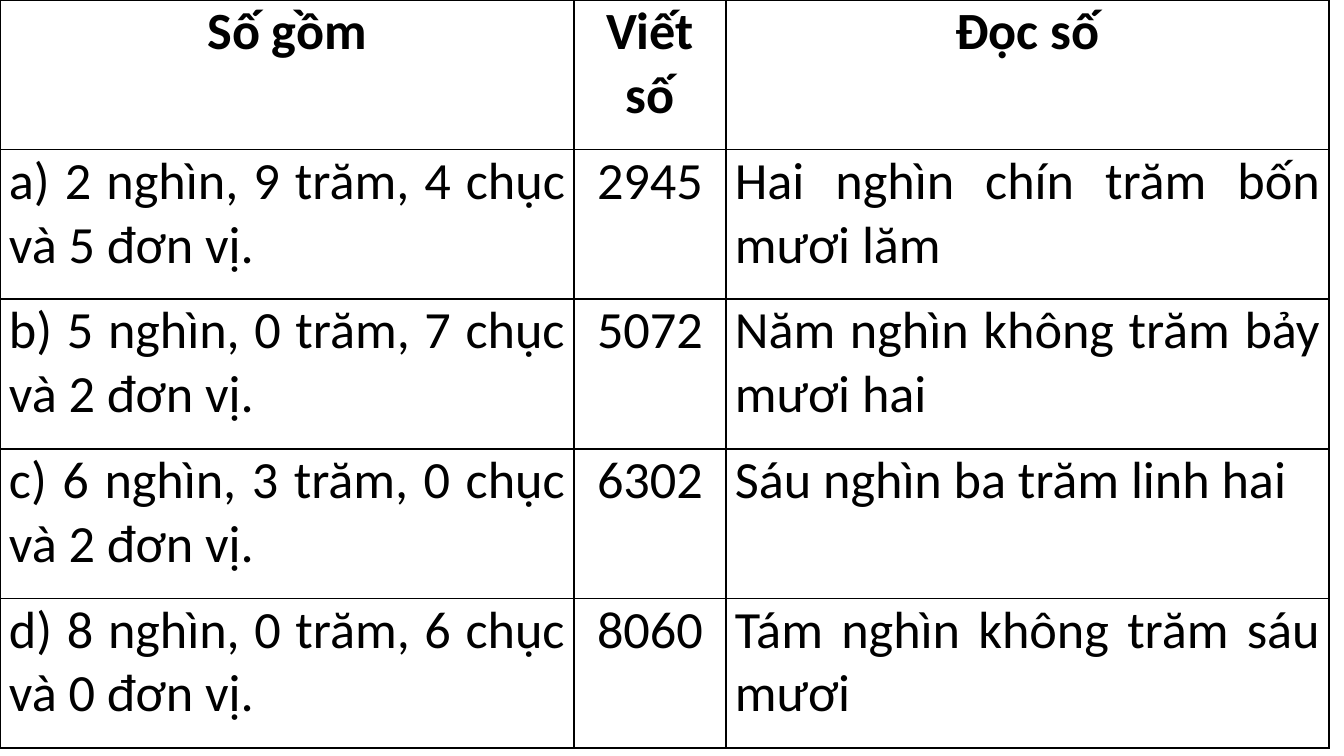
from lxml import etree
from pptx import Presentation
from pptx import util as u
from pptx.dml.color import RGBColor
from pptx.enum import text
from pptx.oxml import ns

HEADER = ("Số gồm", "Viết số", "Đọc số")
NUMBERS = [
    ("a) 2 nghìn, 9 trăm, 4 chục và 5 đơn vị.", "2945", "Hai nghìn chín trăm bốn mươi lăm"),
    ("b) 5 nghìn, 0 trăm, 7 chục và 2 đơn vị.", "5072", "Năm nghìn không trăm bảy mươi hai"),
    ("c) 6 nghìn, 3 trăm, 0 chục và 2 đơn vị.", "6302", "Sáu nghìn ba trăm linh hai"),
    ("d) 8 nghìn, 0 trăm, 6 chục và 0 đơn vị.", "8060", "Tám nghìn không trăm sáu mươi"),
]
THEME = {"font": "Calibri", "size": 28, "ink": "000000", "paper": "FFFFFF", "border": 1}
SLIDE = (1344, 756)
COLUMNS = (574, 152, 603)
TABLE_HEIGHT = 748
MARGIN = 9
CENTER, JUSTIFY = text.PP_ALIGN.CENTER, text.PP_ALIGN.JUSTIFY
BODY_ALIGN = (JUSTIFY, CENTER, JUSTIFY)


def px(n):
    return u.Emu(round(n * 914400 / 134.4))


def add_borders(cell):
    tc_pr = cell._tc.get_or_add_tcPr()
    for side in ("lnL", "lnR", "lnT", "lnB"):
        ln = etree.SubElement(tc_pr, ns.qn(f"a:{side}"), w=str(u.Pt(THEME["border"])))
        fill = etree.SubElement(ln, ns.qn("a:solidFill"))
        etree.SubElement(fill, ns.qn("a:srgbClr"), val=THEME["ink"])


def fill_cell(cell, words, align, bold, margin):
    add_borders(cell)
    cell.fill.solid()
    cell.fill.fore_color.rgb = RGBColor.from_string(THEME["paper"])
    cell.margin_left = cell.margin_right = px(margin)
    cell.margin_top = cell.margin_bottom = 0
    cell.vertical_anchor = text.MSO_ANCHOR.TOP
    p = cell.text_frame.paragraphs[0]
    p.text = words
    p.alignment = align
    font = p.runs[0].font
    font.name, font.size, font.bold = THEME["font"], u.Pt(THEME["size"]), bold
    font.color.rgb = RGBColor.from_string(THEME["ink"])


def main():
    prs = Presentation()
    prs.slide_width, prs.slide_height = map(px, SLIDE)
    s = prs.slides.add_slide(prs.slide_layouts[6])
    rows = [HEADER, *NUMBERS]
    frame = s.shapes.add_table(len(rows), len(COLUMNS), 0, 0, px(sum(COLUMNS)), px(TABLE_HEIGHT))
    table = frame.table
    table.first_row = table.horz_banding = False
    for column, width in zip(table.columns, COLUMNS):
        column.width = px(width)
    for i, row in enumerate(rows):
        table.rows[i].height = px(TABLE_HEIGHT / len(rows))
        for j, words in enumerate(row):
            align = BODY_ALIGN[j] if i else CENTER
            margin = MARGIN if i or j else 0
            fill_cell(table.cell(i, j), words, align, i == 0, margin)
    prs.save("out.pptx")


if __name__ == "__main__":
    main()
